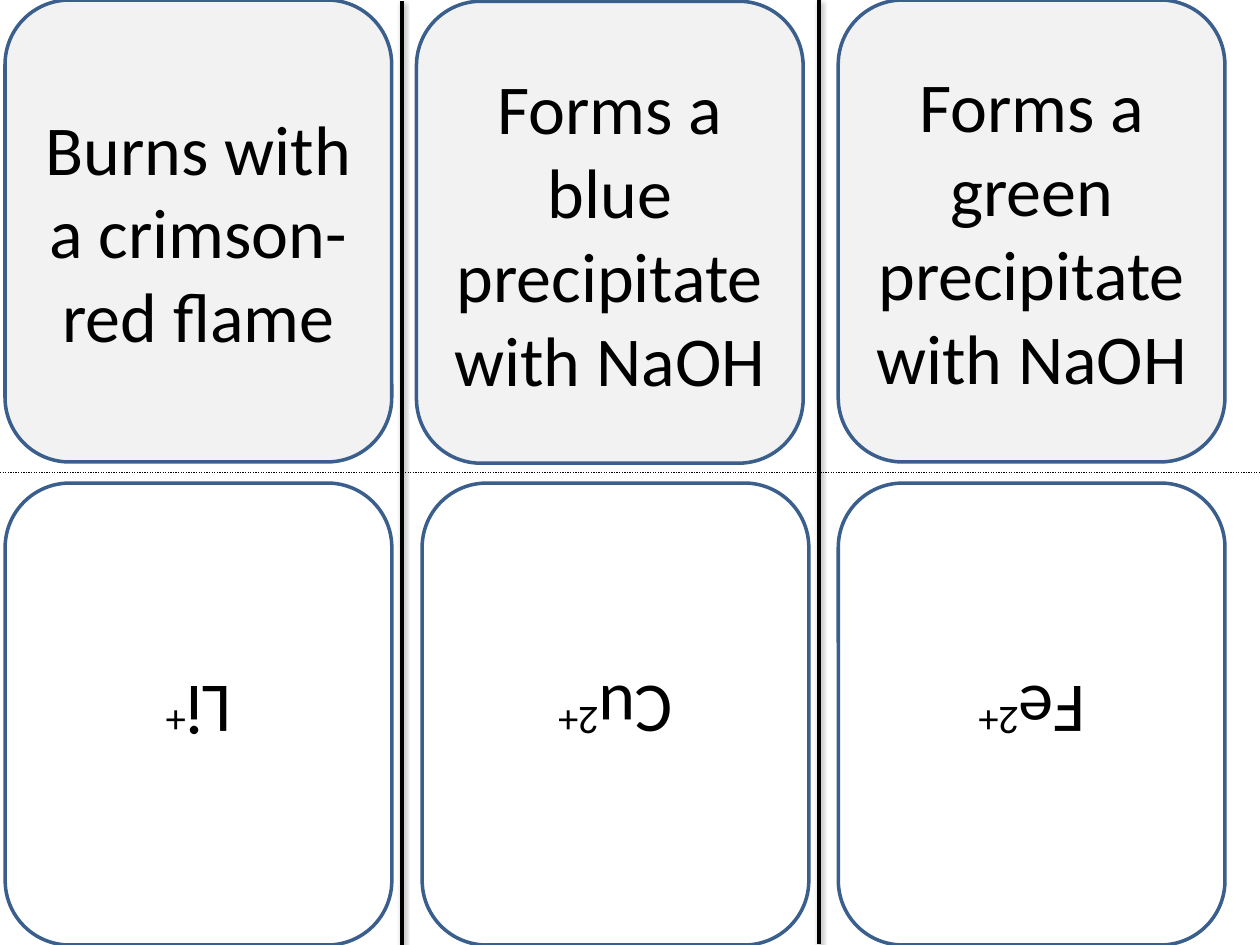
"""Builds a sheet of fold-over flash cards on tests for metal ions."""
from dataclasses import dataclass

from lxml import etree
from pptx import Presentation
from pptx import util as u
from pptx.dml.color import RGBColor
from pptx.enum import dml, shapes, text
from pptx.oxml.ns import qn


@dataclass(frozen=True)
class Theme:
    front: str = "F2F2F2"
    back: str = "FFFFFF"
    edge: str = "3A5F8C"
    ink: str = "000000"
    face: str = "Calibri"
    size: int = 40
    rule: float = 2
    fold: float = 0.75


def apply(item, vals):
    for name, val in vals.items():
        setattr(item, name, val)


class Sheet:
    def __init__(self, slide, theme):
        self.slide, self.theme = slide, theme

    def card(self, box, fill, parts, turn=0):
        th = self.theme
        card = self.slide.shapes.add_shape(
            shapes.MSO_SHAPE.ROUNDED_RECTANGLE, *map(u.Pt, box))
        card.rotation = turn
        card.shadow.inherit = False
        card.fill.solid()
        card.fill.fore_color.rgb = RGBColor.from_string(fill)
        card.line.color.rgb = RGBColor.from_string(th.edge)
        card.line.width = u.Pt(th.rule)
        frame = card.text_frame
        apply(frame, {"word_wrap": True,
                      "vertical_anchor": text.MSO_ANCHOR.MIDDLE})
        para = frame.paragraphs[0]
        para.alignment = text.PP_ALIGN.CENTER
        for words, base in parts:
            run = para.add_run()
            run.text = words
            apply(run.font, {"name": th.face, "size": u.Pt(th.size)})
            run.font.color.rgb = RGBColor.from_string(th.ink)
            if base:
                run._r.get_or_add_rPr().set("baseline", str(base * 1000))

    def line(self, ends, width, dash=None, shade=False):
        ink = self.theme.ink
        line = self.slide.shapes.add_connector(
            shapes.MSO_CONNECTOR.STRAIGHT, *map(u.Pt, ends))
        line.line.color.rgb = RGBColor.from_string(ink)
        apply(line.line, {"width": u.Pt(width), "dash_style": dash})
        fx = etree.SubElement(line._element.spPr, qn("a:effectLst"))
        if shade:
            drop = etree.SubElement(
                fx, qn("a:outerShdw"), blurRad=str(u.Pt(3.1)),
                dist=str(u.Pt(1.6)), dir="5400000", rotWithShape="0")
            tone = etree.SubElement(drop, qn("a:srgbClr"), val=ink)
            etree.SubElement(tone, qn("a:alpha"), val="38000")


def main():
    deck = Presentation()
    wide, high = 720, 540
    apply(deck, {"slide_width": u.Pt(wide), "slide_height": u.Pt(high)})
    theme = Theme()
    sheet = Sheet(deck.slides.add_slide(deck.slide_layouts[6]), theme)
    size = 221, 264
    low = high - size[1]
    cards = [
        (2.9, 0, 2.9, "Burns with a crimson-red flame", "Li", "+"),
        (238, 0.7, 241.2, "Forms a blue precipitate with NaOH", "Cu", "2+"),
        (479, 0, 479, "Forms a green precipitate with NaOH", "Fe", "2+"),
    ]
    for left, top, back, clue, ion, charge in cards:
        sheet.card((left, top, *size), theme.front, [(clue, 0)])
        sheet.card((back, low, *size), theme.back,
                   [(ion, 0), (charge, 30)], turn=180)
    sheet.line((0, high / 2, wide, high / 2), theme.fold,
               dash=dml.MSO_LINE.ROUND_DOT)
    for cut, top, end in ((229.7, 0.7, high), (468, 0, high - 0.7)):
        sheet.line((cut, top, cut, end), theme.rule, shade=True)
    deck.save("out.pptx")


if __name__ == "__main__":
    main()
